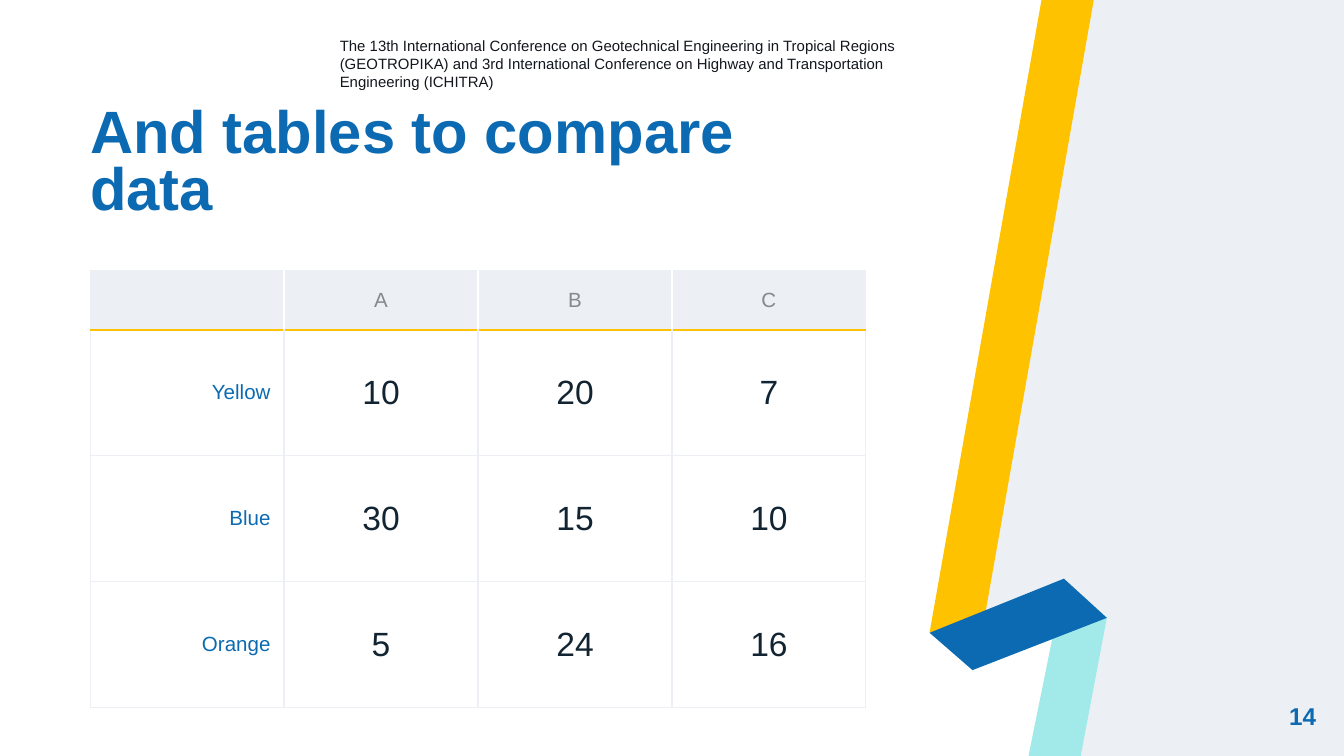
"""Builds a slide with a comparison table beside a folded ribbon."""
import pptx
import pptx.util
import pptx.dml.color
import pptx.enum.text
import pptx.oxml

Pt = pptx.util.Pt
ALIGN = pptx.enum.text.PP_ALIGN
ANCHOR = pptx.enum.text.MSO_ANCHOR
FONT = "Arial"
COLORS = {
    "mist": "ECEFF3", "yellow": "FEC200", "aqua": "A2EAE9", "blue": "0B6AB1",
    "white": "FFFFFF", "gray": "84898D", "navy": "122431", "ink": "13171D",
}

FOLD_LEFT, FOLD_TOP, FOLD_RIGHT = (498.2, 339), (570.3, 310.2), (592.7, 330.6)
RIBBON_TOP, RIBBON_BOTTOM = (585.5, 0), (578.8, 405)
SHAPES = [
    ("mist", [RIBBON_TOP, (527.8, 327), FOLD_TOP, FOLD_RIGHT, RIBBON_BOTTOM, (720, 405), (720, 0)]),
    ("yellow", [(558.2, 0), RIBBON_TOP, (527.8, 328), FOLD_LEFT]),
    ("aqua", [(551.4, 405), (563.8, 341), FOLD_RIGHT, RIBBON_BOTTOM]),
    ("blue", [FOLD_LEFT, FOLD_TOP, FOLD_RIGHT, (521, 359.4)]),
]
TEXTS = [
    {"text": "And tables to compare data", "box": (48.3, 88, 415.6, 31), "size": 32, "color": "blue",
     "bold": True, "anchor": ANCHOR.BOTTOM, "align": ALIGN.LEFT, "spacing": 0.8},
    {"text": "14", "box": (662, 368, 43, 31), "size": 13, "color": "blue",
     "bold": True, "anchor": ANCHOR.MIDDLE, "align": ALIGN.RIGHT, "spacing": 1},
    {"text": "The 13th International Conference on Geotechnical Engineering in Tropical Regions "
             "(GEOTROPIKA) and 3rd International Conference on Highway and Transportation "
             "Engineering (ICHITRA)",
     "box": (182, 19.5, 336, 31), "size": 8, "color": "ink",
     "bold": False, "anchor": ANCHOR.TOP, "align": ALIGN.LEFT, "spacing": 1},
]
ROWS = [
    ["", "A", "B", "C"],
    ["Yellow", "10", "20", "7"],
    ["Blue", "30", "15", "10"],
    ["Orange", "5", "24", "16"],
]
TABLE_LEFT, TABLE_TOP, COL_WIDTH = 48.3, 144.7, 103.9
ROW_HEIGHTS = [32, 67.5, 67.5, 67.5]


def rgb(name):
    return pptx.dml.color.RGBColor.from_string(COLORS[name])


def style_runs(p, size, color, align, bold=False):
    p.alignment = align
    for r in p.runs:
        r.font.name, r.font.size, r.font.bold = FONT, Pt(size), bold
        r.font.color.rgb = rgb(color)


def add_polygon(s, color, points):
    builder = s.shapes.build_freeform(*points[0], scale=Pt(1))
    builder.add_line_segments(points[1:], close=True)
    sp = builder.convert_to_shape()
    sp.shadow.inherit = False
    sp.fill.solid()
    sp.fill.fore_color.rgb = rgb(color)
    sp.line.fill.background()


def add_text(s, item):
    tf = s.shapes.add_textbox(*map(Pt, item["box"])).text_frame
    tf.word_wrap = True
    tf.margin_left = tf.margin_top = tf.margin_right = tf.margin_bottom = 0
    tf.vertical_anchor = item["anchor"]
    tf.text = item["text"]
    p = tf.paragraphs[0]
    p.line_spacing = item["spacing"]
    style_runs(p, item["size"], item["color"], item["align"], item["bold"])


def set_border(cell, side, color, width):
    ns = "http://schemas.openxmlformats.org/drawingml/2006/main"
    cell._tc.get_or_add_tcPr().append(pptx.oxml.parse_xml(
        f'<a:ln{side} xmlns:a="{ns}" w="{Pt(width)}"><a:solidFill>'
        f'<a:srgbClr val="{COLORS[color]}"/></a:solidFill></a:ln{side}>'))


def style_cell(cell, row, col):
    header, last = row == 0, len(ROWS[0]) - 1
    cell.text = ROWS[row][col]
    cell.vertical_anchor = ANCHOR.MIDDLE
    cell.margin_left = cell.margin_right = Pt(7.2)
    cell.margin_top = cell.margin_bottom = Pt(5)
    set_border(cell, "L", "white" if header and col > 0 else "mist", 0.75)
    set_border(cell, "R", "white" if header and col < last else "mist", 0.75)
    set_border(cell, "T", *(("yellow", 1.5) if row == 1 else ("mist", 0.75)))
    set_border(cell, "B", *(("yellow", 1.5) if header else ("mist", 0.75)))
    if header:
        cell.fill.solid()
        cell.fill.fore_color.rgb = rgb("mist")
        look = (11, "gray", ALIGN.CENTER)
    else:
        cell.fill.background()
        look = (11, "blue", ALIGN.RIGHT) if col == 0 else (18, "navy", ALIGN.CENTER)
    style_runs(cell.text_frame.paragraphs[0], *look)


def add_data_table(s):
    cols = len(ROWS[0])
    table = s.shapes.add_table(len(ROWS), cols, Pt(TABLE_LEFT), Pt(TABLE_TOP),
                               Pt(COL_WIDTH * cols), Pt(sum(ROW_HEIGHTS))).table
    table.first_row = table.horz_banding = False
    for column in table.columns:
        column.width = Pt(COL_WIDTH)
    for row, height in enumerate(ROW_HEIGHTS):
        table.rows[row].height = Pt(height)
        for col in range(cols):
            style_cell(table.cell(row, col), row, col)


def main():
    prs = pptx.Presentation()
    prs.slide_width, prs.slide_height = Pt(720), Pt(405)
    s = prs.slides.add_slide(prs.slide_layouts[6])
    for color, points in SHAPES:
        add_polygon(s, color, points)
    add_data_table(s)
    for item in TEXTS:
        add_text(s, item)
    prs.save("out.pptx")


if __name__ == "__main__":
    main()
